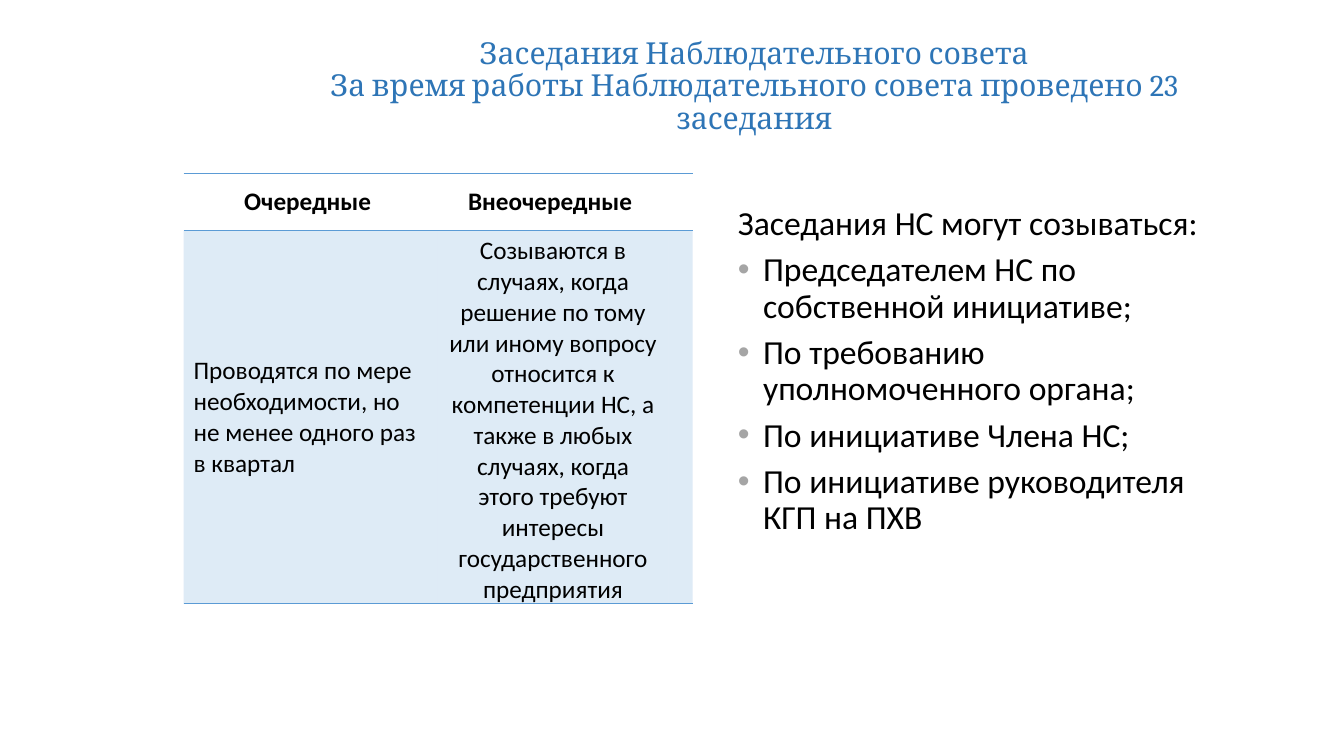
from pptx import Presentation
from pptx.dml.color import RGBColor
from pptx.enum.text import MSO_ANCHOR, PP_ALIGN
from pptx.oxml import parse_xml
from pptx.oxml.ns import nsdecls, qn
from pptx.util import Inches, Pt

# Content
TITLE = ["Заседания Наблюдательного совета",
         "За время работы Наблюдательного совета проведено 23 заседания"]
ROWS = [
    ["Очередные ", "Внеочередные ", ""],
    ["Проводятся по мере необходимости, но не менее одного раз в квартал",
     "Созываются в случаях, когда решение по тому или иному вопросу "
     "относится к компетенции НС, а также в любых случаях, когда этого "
     "требуют интересы государственного предприятия", ""],
]
LEAD = "Заседания НС могут созываться:"
CALLERS = ["Председателем НС по собственной инициативе;",
           "По требованию уполномоченного органа;",
           "По инициативе Члена НС;",
           "По инициативе руководителя КГП на ПХВ"]

# Look and layout
COLORS = {"title": "2E75B6", "text": "000000", "blue": "5B9BD5", "bullet": "A5A5A5"}
WIDTHS = [2.52, 2.29, 0.23]
HEIGHTS = [0.57, 3.7]
NO_STYLE = "{2D5ABB26-0587-4C30-8999-92F81FD0307C}"


def add_run(para, text, size, color="text", face="Calibri", bold=False):
    run = para.add_run()
    run.text = text
    font = run.font
    font.name, font.size, font.bold = face, Pt(size), bold
    font.color.rgb = RGBColor.from_string(COLORS[color])


def add_box(slide, left, top, width, height):
    frame = slide.shapes.add_textbox(
        Inches(left), Inches(top), Inches(width), Inches(height)).text_frame
    frame.word_wrap = True
    return frame


def add_line(cell, side):
    cell._tc.get_or_add_tcPr().append(parse_xml(
        f'<a:{side} {nsdecls("a")} w="12700"><a:solidFill>'
        f'<a:srgbClr val="{COLORS["blue"]}"/></a:solidFill></a:{side}>'))


def add_bullet(para):
    props = para._p.get_or_add_pPr()
    indent = Inches(0.25)
    props.set("marL", str(indent))
    props.set("indent", str(-indent))
    for xml in (f'<a:buClr {nsdecls("a")}><a:srgbClr val="{COLORS["bullet"]}"/></a:buClr>',
                f'<a:buFont {nsdecls("a")} typeface="Arial"/>',
                f'<a:buChar {nsdecls("a")} char="•"/>'):
        props.append(parse_xml(xml))


def main():
    deck = Presentation()
    deck.slide_width, deck.slide_height = Inches(13.33), Inches(7.5)
    slide = deck.slides.add_slide(deck.slide_layouts[6])

    # Title
    frame = add_box(slide, 2.54, 0.4, 9.88, 0.93)
    frame.vertical_anchor = MSO_ANCHOR.MIDDLE
    para = frame.paragraphs[0]
    para.alignment, para.line_spacing = PP_ALIGN.CENTER, 0.9
    for i, line in enumerate(TITLE):
        if i:
            para.add_line_break()
        add_run(para, line, 21.6, "title", "Cambria")

    # Table of meeting kinds
    table = slide.shapes.add_table(
        len(ROWS), len(WIDTHS), Inches(1.82), Inches(1.72),
        Inches(sum(WIDTHS)), Inches(sum(HEIGHTS))).table
    table.horz_banding = False
    table._tbl.tblPr.find(qn("a:tableStyleId")).text = NO_STYLE
    for col, width in zip(table.columns, WIDTHS):
        col.width = Inches(width)
    for r, texts in enumerate(ROWS):
        table.rows[r].height = Inches(HEIGHTS[r])
        head = r == 0
        for c, text in enumerate(texts):
            cell = table.cell(r, c)
            cell.vertical_anchor = MSO_ANCHOR.MIDDLE
            add_line(cell, "lnT")
            add_line(cell, "lnB")
            if head:
                cell.fill.background()
            else:
                cell.fill.solid()
                cell.fill.fore_color.rgb = RGBColor.from_string(COLORS["blue"])
                tint = cell._tc.tcPr.find(qn("a:solidFill")).find(qn("a:srgbClr"))
                tint.append(parse_xml(f'<a:alpha {nsdecls("a")} val="20000"/>'))
            if text:
                para = cell.text_frame.paragraphs[0]
                para.alignment = PP_ALIGN.CENTER if head or c else PP_ALIGN.LEFT
                add_run(para, text, 18, bold=head)

    # Who may call a meeting
    frame = add_box(slide, 7.22, 2, 5.2, 4.76)
    for i, text in enumerate([LEAD] + CALLERS):
        para = frame.add_paragraph() if i else frame.paragraphs[0]
        para.line_spacing = 0.9
        if i:
            para.space_before = Pt(7.2)
            add_bullet(para)
        add_run(para, text, 24)

    deck.save("out.pptx")


if __name__ == "__main__":
    main()
